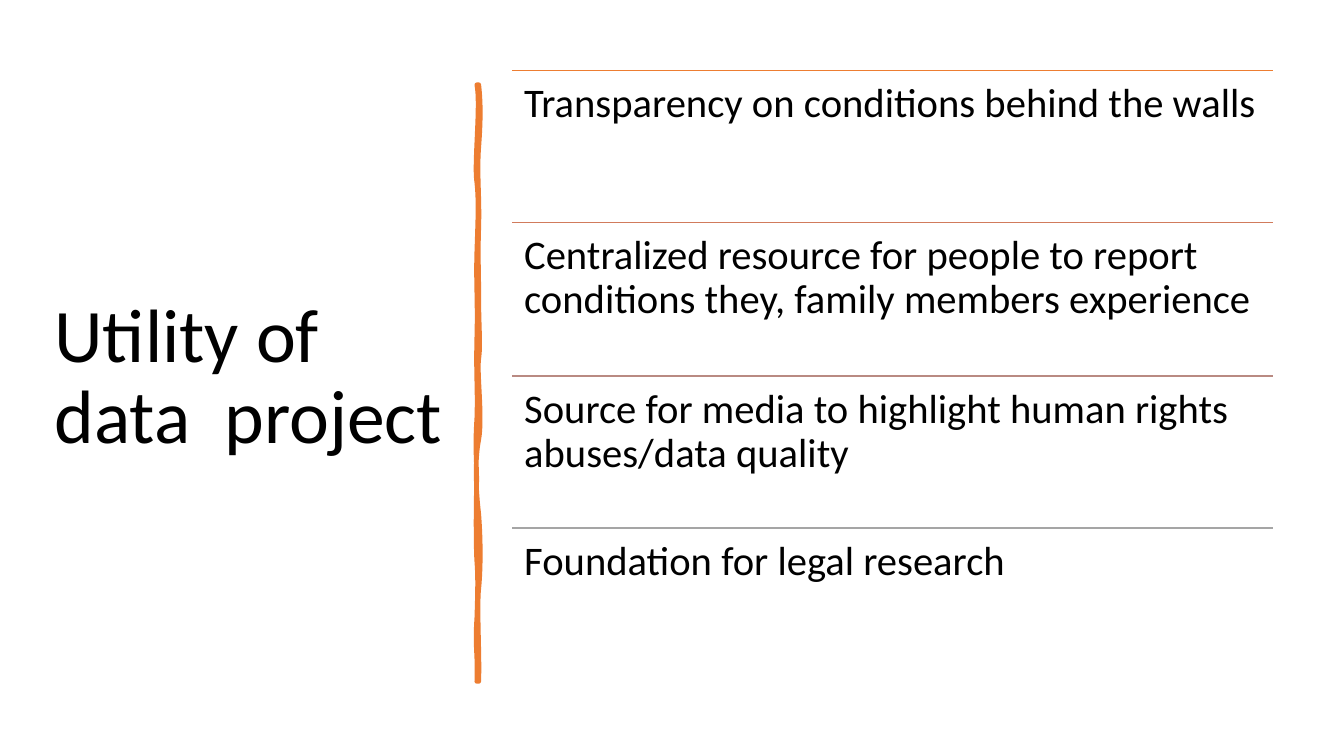
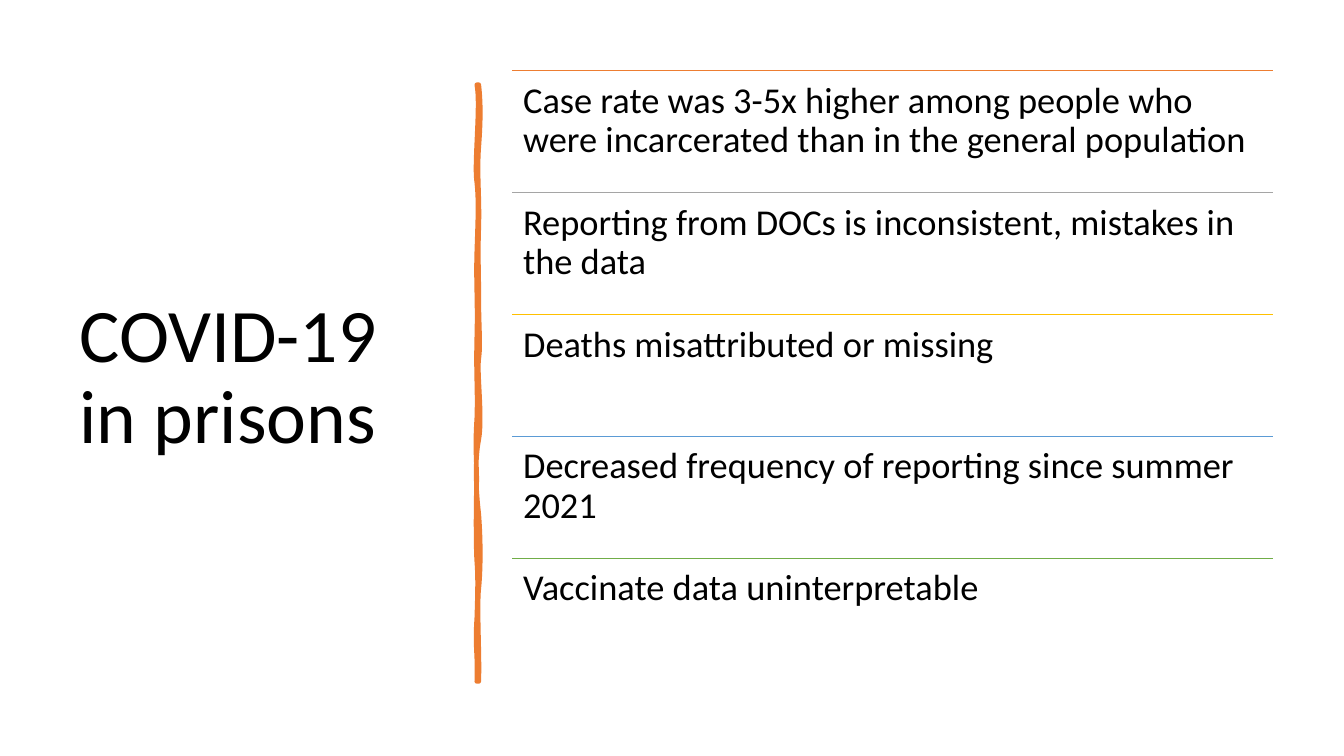
"""Build two title-and-list slides that share a hand-drawn vertical divider."""
from dataclasses import dataclass
from typing import Any

from lxml.etree import SubElement
from pptx import Presentation
from pptx.dml.color import RGBColor
from pptx.enum.shapes import MSO_CONNECTOR as CONN
from pptx.enum.text import MSO_ANCHOR as ANCHOR, MSO_AUTO_SIZE as FIT, PP_ALIGN as ALIGN
from pptx.oxml.ns import qn
from pptx.util import Emu, Pt

PX = 9144
FONT = "Calibri"
COLORS = {
    "text": "000000", "orange": "ED7D31", "clay": "D17B5C", "rose": "B98A82",
    "gray": "A5A5A5", "gold": "FFC000", "blue": "5B9BD5", "green": "70AD47",
}
LIST_LEFT, LIST_TOP, LIST_WIDTH, LIST_HEIGHT = 508, 70, 755, 606
TITLE_TOP, TITLE_HEIGHT = 70, 611
STROKE_LEFT, STROKE_TOP, STROKE_LENGTH, STROKE_THICK = 178, 379, 592, 2

Point = tuple[int, int]
Curve = tuple[Point, Point, Point]

STROKE_START: Point = (475, 84)
STROKE_OUTLINE: list[Curve] = [
    ((477, 102), (477, 119), (475, 146)), ((473, 173), (476, 195), (475, 226)),
    ((474, 257), (475, 262), (475, 294)), ((475, 325), (477, 342), (475, 356)),
    ((473, 370), (479, 414), (475, 436)), ((471, 457), (472, 484), (475, 510)),
    ((477, 536), (477, 564), (475, 584)), ((473, 603), (476, 650), (475, 676)),
    ((474, 676), (473, 676), (473, 676)), ((474, 646), (471, 644), (473, 613)),
    ((474, 583), (474, 570), (473, 557)), ((472, 544), (472, 495), (473, 477)),
    ((473, 459), (471, 445), (473, 415)), ((474, 386), (472, 373), (473, 335)),
    ((474, 298), (472, 281), (473, 250)), ((474, 218), (475, 200), (473, 181)),
    ((470, 163), (477, 104), (473, 84)), ((474, 84), (474, 84), (475, 84)),
]
STROKE_BODY: list[Curve] = [
    ((475, 115), (472, 125), (475, 152)), ((477, 179), (474, 197), (475, 208)),
    ((476, 220), (474, 255), (475, 294)), ((476, 333), (473, 343), (475, 362)),
    ((477, 381), (477, 397), (475, 430)), ((472, 463), (475, 474), (475, 516)),
    ((475, 557), (474, 553), (475, 578)), ((476, 603), (474, 647), (475, 676)),
    ((474, 675), (473, 675), (473, 676)), ((470, 649), (474, 632), (473, 613)),
    ((472, 595), (475, 569), (473, 539)), ((471, 510), (476, 500), (473, 471)),
    ((470, 442), (477, 420), (473, 386)), ((469, 351), (474, 325), (473, 300)),
    ((471, 275), (471, 259), (473, 238)), ((474, 216), (474, 185), (473, 164)),
    ((471, 143), (475, 121), (473, 84)), ((474, 84), (474, 84), (475, 84)),
]


@dataclass(frozen=True)
class Item:
    text: str
    color: str


@dataclass(frozen=True)
class ListSlide:
    title: str
    title_left: int
    title_width: int
    size: int
    inset: int
    items: tuple[Item, ...]


SLIDES = (
    ListSlide("Utility of data  project", 44, 417, 29, 12, (
        Item("Transparency on conditions behind the walls", "orange"),
        Item("Centralized resource for people to report conditions they, "
             "family members experience", "clay"),
        Item("Source for media to highlight human rights abuses/data quality", "rose"),
        Item("Foundation for legal research", "gray"),
    )),
    ListSlide("COVID-19 in prisons", 69, 374, 26, 11, (
        Item("Case rate was 3-5x higher among people who were incarcerated "
             "than in the general population", "orange"),
        Item("Reporting from DOCs is inconsistent, mistakes in the data", "gray"),
        Item("Deaths misattributed or missing", "gold"),
        Item("Decreased frequency of reporting since summer 2021", "blue"),
        Item("Vaccinate data uninterpretable", "green"),
    )),
)


def px(n: float) -> Emu:
    return Emu(round(n * PX))


def rgb(name: str) -> RGBColor:
    return RGBColor.from_string(COLORS[name])


def apply(target: Any, values: dict[str, Any]) -> None:
    for name, value in values.items():
        setattr(target, name, value)


def write(tf: Any, text: str, size: int, anchor: Any) -> None:
    apply(tf, {"word_wrap": True, "auto_size": FIT.NONE, "vertical_anchor": anchor})
    p = tf.paragraphs[0]
    apply(p, {"alignment": ALIGN.LEFT, "line_spacing": 0.9})
    r = p.add_run()
    r.text = text
    apply(r.font, {"name": FONT, "size": Pt(size)})
    r.font.color.rgb = rgb("text")


def add_title(s: Any, page: ListSlide) -> None:
    title = s.shapes.title
    apply(title, {"left": px(page.title_left), "top": px(TITLE_TOP),
                  "width": px(page.title_width), "height": px(TITLE_HEIGHT)})
    write(title.text_frame, page.title, 54, ANCHOR.MIDDLE)


def add_point(parent: Any, point: Point) -> None:
    x, y = point
    SubElement(parent, qn("a:pt"), x=str(y - STROKE_START[1]),
               y=str(STROKE_START[0] - x))


def add_curves(outlines: Any, curves: list[Curve], flags: dict[str, str]) -> None:
    outline = SubElement(outlines, qn("a:path"), w=str(STROKE_LENGTH),
                         h=str(STROKE_THICK), **flags)
    add_point(SubElement(outline, qn("a:moveTo")), STROKE_START)
    for curve in curves:
        bend = SubElement(outline, qn("a:cubicBezTo"))
        for point in curve:
            add_point(bend, point)
    SubElement(outline, qn("a:close"))


def add_stroke(s: Any) -> None:
    right, bottom = STROKE_LEFT + STROKE_LENGTH, STROKE_TOP + STROKE_THICK
    builder = s.shapes.build_freeform(STROKE_LEFT, STROKE_TOP, scale=PX)
    builder.add_line_segments([(right, STROKE_TOP), (right, bottom),
                               (STROKE_LEFT, bottom)])
    sp = builder.convert_to_shape()
    sp.rotation = 90
    sp.shadow.inherit = False
    sp.fill.solid()
    sp.fill.fore_color.rgb = rgb("orange")
    sp.line.color.rgb = rgb("orange")
    sp.line.width = Pt(3.25)
    props = sp._element.spPr
    SubElement(props.find(qn("a:ln")), qn("a:round"))
    outlines = props.find(qn("a:custGeom")).find(qn("a:pathLst"))
    for child in list(outlines):
        outlines.remove(child)
    add_curves(outlines, STROKE_OUTLINE, {"fill": "none"})
    add_curves(outlines, STROKE_BODY, {"stroke": "0"})


def add_rule(group: Any, top: int, color: str) -> None:
    line = group.shapes.add_connector(CONN.STRAIGHT, px(LIST_LEFT), px(top),
                                      px(LIST_LEFT + LIST_WIDTH), px(top))
    line.line.color.rgb = rgb(color)
    line.line.width = Pt(1)
    SubElement(line._element.spPr, qn("a:effectLst"))


def add_list(s: Any, page: ListSlide) -> None:
    group = s.shapes.add_group_shape()
    count = len(page.items)
    for i, item in enumerate(page.items):
        top = LIST_TOP + i * LIST_HEIGHT // count
        add_rule(group, top, item.color)
        sp = group.shapes.add_textbox(px(LIST_LEFT), px(top), px(LIST_WIDTH),
                                      px(LIST_HEIGHT // count))
        tf = sp.text_frame
        apply(tf, {f"margin_{side}": px(page.inset)
                   for side in ("left", "top", "right", "bottom")})
        write(tf, item.text, page.size, ANCHOR.TOP)


def main() -> None:
    prs = Presentation()
    apply(prs, {"slide_width": px(1333.33), "slide_height": px(750)})
    for page in SLIDES:
        s = prs.slides.add_slide(prs.slide_layouts[5])
        add_title(s, page)
        add_stroke(s)
        add_list(s, page)
    prs.save("out.pptx")


if __name__ == "__main__":
    main()
